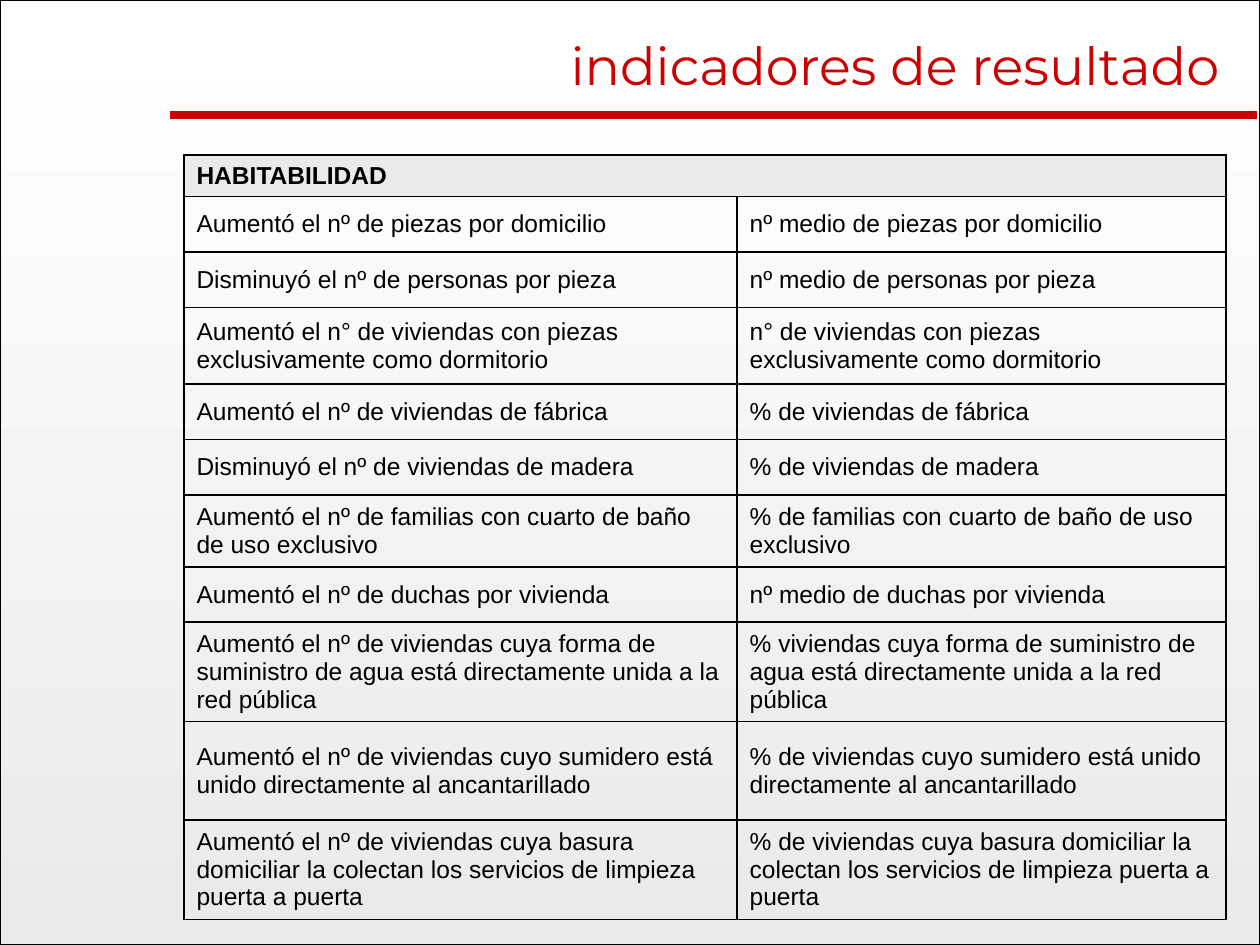
from lxml import etree
from pptx import Presentation
from pptx.dml.color import RGBColor
from pptx.enum.shapes import MSO_CONNECTOR, MSO_SHAPE
from pptx.enum.text import MSO_ANCHOR, PP_ALIGN
from pptx.oxml.ns import qn
from pptx.util import Inches, Pt

RECTANGLE = MSO_SHAPE.RECTANGLE
STRAIGHT = MSO_CONNECTOR.STRAIGHT
RIGHT, LEFT = PP_ALIGN.RIGHT, PP_ALIGN.LEFT
MIDDLE, BOTTOM = MSO_ANCHOR.MIDDLE, MSO_ANCHOR.BOTTOM

RED, BLACK, WHITE, GRAY = "CC0000", "000000", "FFFFFF", "EAEAEA"
TITLE_ONLY = 5
COLUMN_WIDTHS = (4.39, 3.88)
HEADING, HEADING_HEIGHT = "HABITABILIDAD", 0.33
# Row height, result, indicator
INDICATORS = (
    (0.44, "Aumentó el nº de piezas por domicilio",
     "nº medio de piezas por domicilio"),
    (0.44, "Disminuyó el nº de personas por pieza",
     "nº medio de personas por pieza"),
    (0.61, "Aumentó el n° de viviendas con piezas exclusivamente como dormitorio",
     "n° de viviendas con piezas exclusivamente como dormitorio"),
    (0.44, "Aumentó el nº de viviendas de fábrica",
     "% de viviendas de fábrica"),
    (0.44, "Disminuyó el nº de viviendas de madera",
     "% de viviendas de madera"),
    (0.57, "Aumentó el nº de familias con cuarto de baño de uso exclusivo",
     "% de familias con cuarto de baño de uso exclusivo"),
    (0.44, "Aumentó el nº de duchas por vivienda",
     "nº medio de duchas por vivienda"),
    (0.79, "Aumentó el nº de viviendas cuya forma de suministro de agua está "
           "directamente unida a la red pública",
     "% viviendas cuya forma de suministro de agua está directamente unida "
     "a la red pública"),
    (0.78, "Aumentó el nº de viviendas cuyo sumidero está unido directamente "
           "al ancantarillado",
     "% de viviendas cuyo sumidero está unido directamente al ancantarillado"),
    (0.79, "Aumentó el nº de viviendas cuya basura domiciliar la colectan los "
           "servicios de limpieza puerta a puerta",
     "% de viviendas cuya basura domiciliar la colectan los servicios de "
     "limpieza puerta a puerta"),
)


def color(value):
    return RGBColor.from_string(value)


def write(text_frame, text, size=14, font="Arial", ink=BLACK, bold=False, align=LEFT):
    paragraph = text_frame.paragraphs[0]
    paragraph.alignment = align
    run = paragraph.add_run()
    run.text = text
    run.font.size = Pt(size)
    run.font.name = font
    run.font.bold = bold
    run.font.color.rgb = color(ink)


def add_backdrop(slide, width, height):
    """Framed vertical gradient, behind everything else."""
    backdrop = slide.shapes.add_shape(RECTANGLE, 0, 0, width, height)
    backdrop.shadow.inherit = False
    backdrop.fill.gradient()
    backdrop.fill.gradient_angle = 270
    for stop, (position, value) in zip(backdrop.fill.gradient_stops, ((0, WHITE), (1, GRAY))):
        stop.position = position
        stop.color.rgb = color(value)
    backdrop.line.color.rgb = color(BLACK)
    backdrop.line.width = Pt(0.75)
    slide.shapes._spTree.insert(2, backdrop._element)


def add_title(slide, text):
    title = slide.shapes.title
    title.left, title.top = Inches(3.9), Inches(0.21)
    title.width, title.height = Inches(5.88), Inches(0.6)
    title.text_frame.word_wrap = False
    title.text_frame.vertical_anchor = MIDDLE
    write(title.text_frame, text, size=30, font="Montserrat", ink=RED, align=RIGHT)


def add_rule(slide, left, right, top):
    rule = slide.shapes.add_connector(
        STRAIGHT, Inches(left), Inches(top), Inches(right), Inches(top))
    rule.line.color.rgb = color(RED)
    rule.line.width = Pt(4.5)
    etree.SubElement(rule._element.spPr, qn("a:effectLst"))


def add_borders(cell):
    properties = cell._tc.get_or_add_tcPr()
    for side in ("a:lnL", "a:lnR", "a:lnT", "a:lnB"):
        border = etree.SubElement(properties, qn(side), w=str(Pt(1)))
        fill = etree.SubElement(border, qn("a:solidFill"))
        etree.SubElement(fill, qn("a:srgbClr"), val=BLACK)


def add_indicator_table(slide, left, top):
    heights = [HEADING_HEIGHT] + [row[0] for row in INDICATORS]
    table = slide.shapes.add_table(
        len(heights), len(COLUMN_WIDTHS), Inches(left), Inches(top),
        Inches(sum(COLUMN_WIDTHS)), Inches(sum(heights))).table
    table.first_row = table.horz_banding = False
    for column, width in zip(table.columns, COLUMN_WIDTHS):
        column.width = Inches(width)
    for row, height in zip(table.rows, heights):
        row.height = Inches(height)
    for cell in table.iter_cells():
        add_borders(cell)
        cell.fill.background()
        cell.vertical_anchor = MIDDLE

    heading = table.cell(0, 0)
    heading.merge(table.cell(0, 1))
    heading.fill.solid()
    heading.fill.fore_color.rgb = color(GRAY)
    heading.vertical_anchor = BOTTOM
    write(heading.text_frame, HEADING, bold=True)
    for row, (_, *texts) in enumerate(INDICATORS, start=1):
        for column, text in enumerate(texts):
            write(table.cell(row, column).text_frame, text)


def main():
    presentation = Presentation()
    presentation.slide_width, presentation.slide_height = Inches(10), Inches(7.5)
    slide = presentation.slides.add_slide(presentation.slide_layouts[TITLE_ONLY])
    add_backdrop(slide, presentation.slide_width, presentation.slide_height)
    add_rule(slide, 1.35, 9.98, 0.91)
    add_indicator_table(slide, 1.46, 1.23)
    add_title(slide, "indicadores de resultado")
    presentation.save("out.pptx")


if __name__ == "__main__":
    main()
